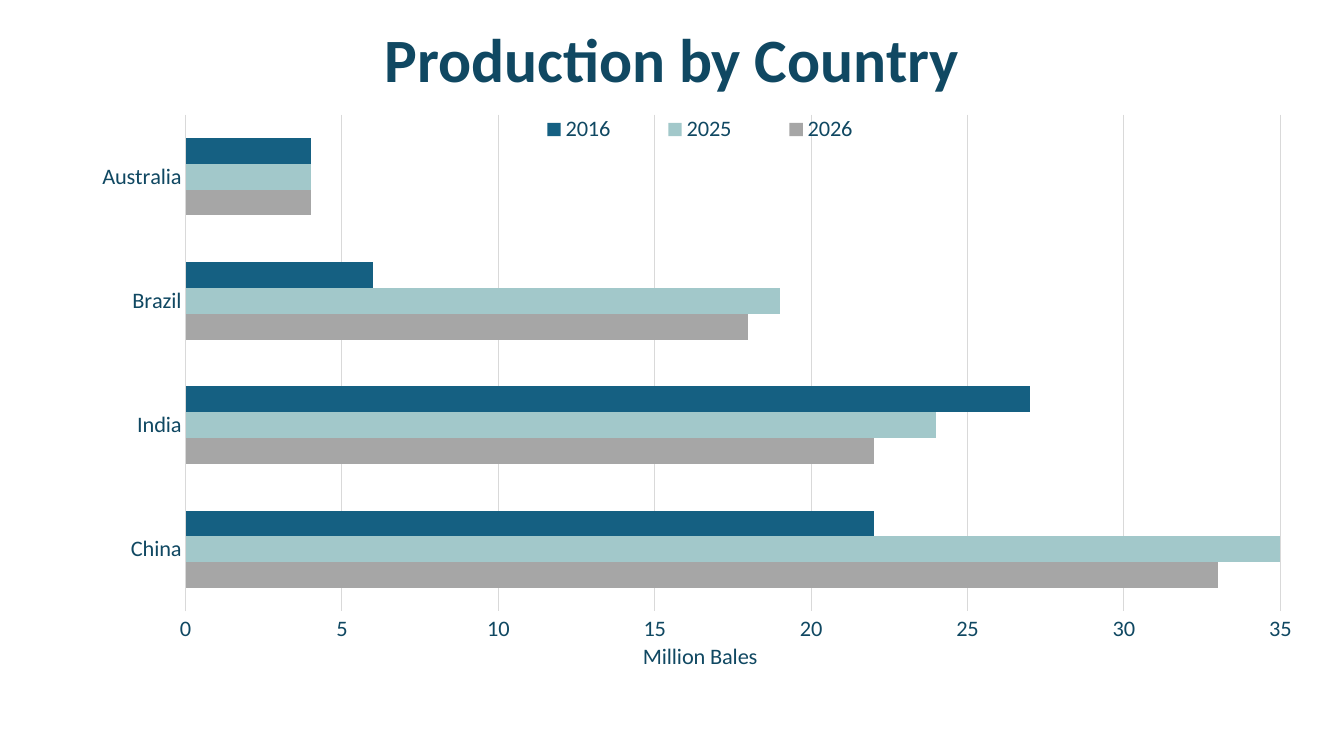
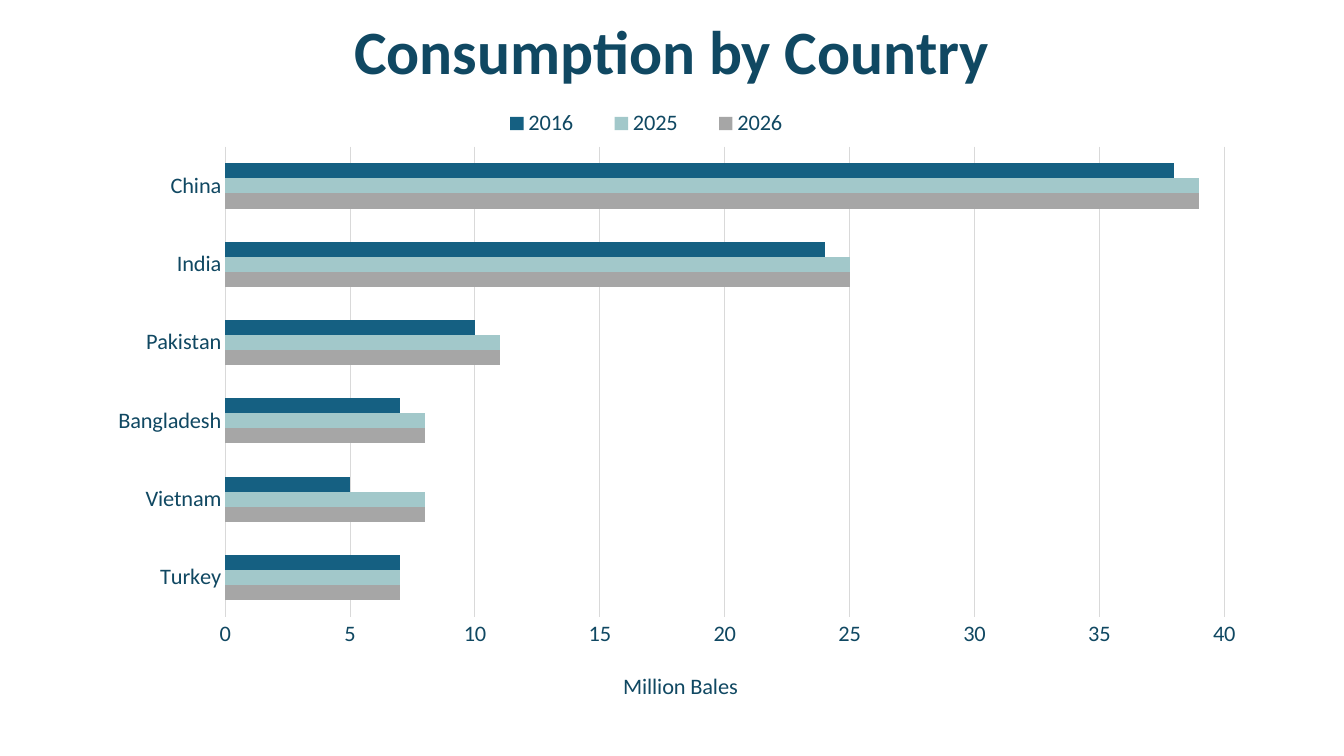
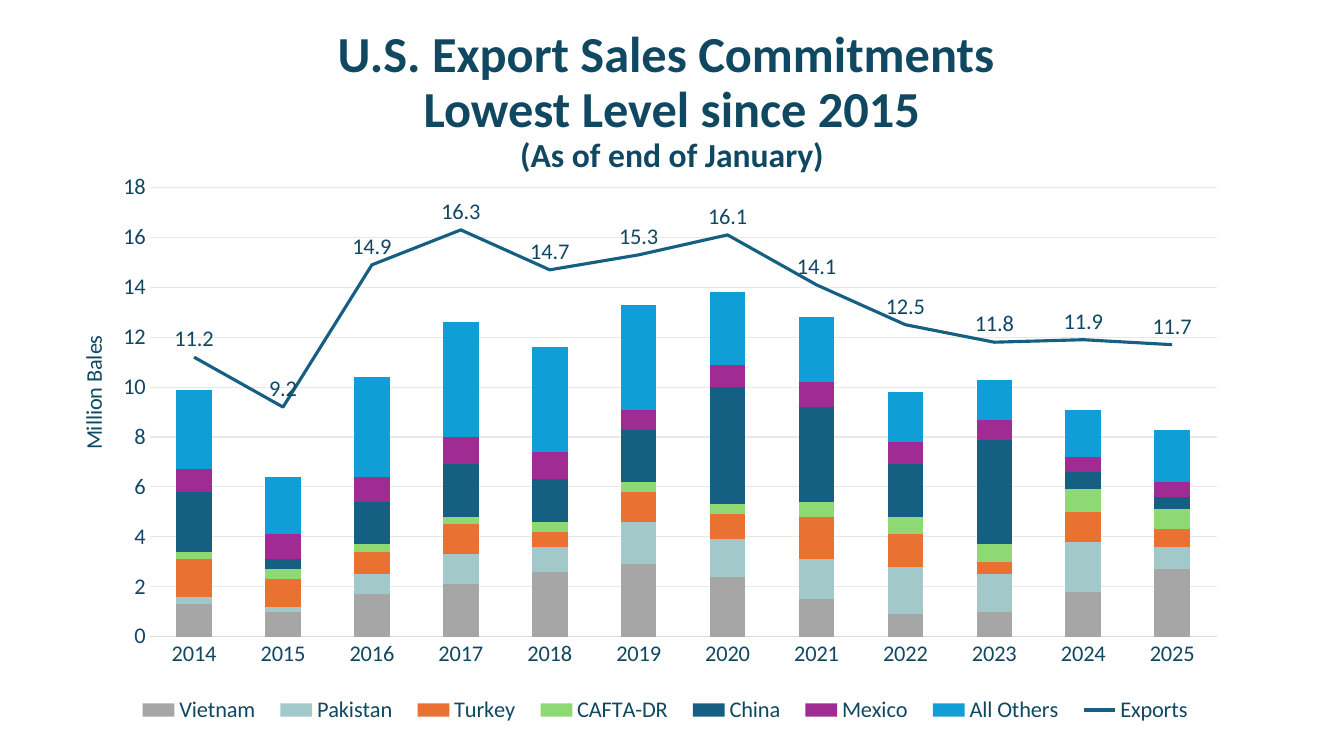
import pptx
import pptx.util
import pptx.oxml
import pptx.oxml.ns
import pptx.chart.data
import pptx.dml.color
import pptx.enum.chart
import pptx.enum.text


class Theme:
    font = "Calibri"
    ink, rule, pale = "104862", "D9D9D9", "E8E8E8"
    navy, mint, grey = "156082", "A2C8CA", "A6A6A6"
    rust, lime, plum, sky = "E97132", "8ED973", "A02B93", "0F9ED5"
    big, mid, small, body = 44, 36, 24, 16
    hair, bold = 0.75, 2.25


kinds = pptx.enum.chart.XL_CHART_TYPE
marks = pptx.enum.chart.XL_TICK_MARK
spots = pptx.enum.chart.XL_LABEL_POSITION
rgb = pptx.dml.color.RGBColor.from_string
cell = pptx.util.Pt(6)  # grid of 160 columns by 90 rows
space = pptx.oxml.ns.nsdecls("c")


def dress(font, size, bold=False):
    look = {"name": Theme.font, "size": pptx.util.Pt(size), "bold": bold}
    for key, val in look.items():
        setattr(font, key, val)
    font.color.rgb = rgb(Theme.ink)


def fit(part, slot, box, inner=""):
    """Place a chart part at a box given in percent of the chart."""
    for old in part.findall(pptx.oxml.ns.qn("c:layout")):
        part.remove(old)
    rows = inner + '<c:xMode val="edge"/><c:yMode val="edge"/>'
    rows += "".join(f'<c:{key} val="{val / 100:.3f}"/>' for key, val in zip("xywh", box))
    part.insert(slot, pptx.oxml.parse_xml(
        f"<c:layout {space}><c:manualLayout>{rows}</c:manualLayout></c:layout>"))


# Content: boxes in grid cells, chart parts in percent
years = [("2026", Theme.grey), ("2025", Theme.mint), ("2016", Theme.navy)]
pages = [
    {
        "head": [("Production by Country", Theme.big)],
        "top": (11, 2.6, 138, 9.6), "area": (4.4, 10.9, 151.2, 69.8),
        "kind": kinds.BAR_CLUSTERED, "gap": 182, "lap": 0,
        "max": 35, "step": 5, "fmt": "0", "grid": Theme.rule, "turn": 0,
        "plot": (11.7, 4, 86.2, 85.7), "key": (36.2, 3.3, 32, 6.5), "unit": (47.4, 94.2),
        "cats": ["China", "India", "Brazil", "Australia"],
        "rows": [(*year, vals) for year, vals in zip(years, [
            [33, 22, 18, 4], [35, 24, 19, 4], [22, 27, 6, 4]])],
    },
    {
        "head": [("Consumption by Country", Theme.big)],
        "top": (11, 1.7, 138, 9.6), "area": (9.5, 11.5, 139.6, 72.7),
        "kind": kinds.BAR_CLUSTERED, "gap": 219, "lap": 0,
        "max": 40, "step": 5, "fmt": "0", "grid": Theme.rule, "turn": 0,
        "plot": (12.4, 8.3, 85.2, 77.8), "key": (33.8, 1.2, 29, 6.5), "unit": (46, 94.4),
        "cats": ["Turkey", "Vietnam", "Bangladesh", "Pakistan", "India", "China"],
        "rows": [(*year, vals) for year, vals in zip(years, [
            [7, 8, 8, 11, 25, 39], [7, 8, 8, 11, 25, 39], [7, 5, 7, 10, 24, 38]])],
    },
    {
        "head": [("U.S. Export Sales Commitments ", Theme.mid),
                 ("Lowest Level since 2015", Theme.mid),
                 ("(As of end of January)", Theme.small)],
        "top": (0, 4.6, 160, 15), "area": (7.8, 19.6, 147.2, 68.2),
        "kind": kinds.COLUMN_STACKED, "gap": 150, "lap": 100,
        "max": 18, "step": 2, "fmt": "#,##0", "grid": Theme.pale, "turn": -5400000,
        "plot": (6.8, 4, 86.3, 78.4), "key": (4.8, 91.7, 87.4, 7), "unit": (0.7, 29.1),
        "cats": [str(year) for year in range(2014, 2026)],
        "rows": [
            ("Vietnam", Theme.grey, [1.3, 1, 1.7, 2.1, 2.6, 2.9, 2.4, 1.5, 0.9, 1, 1.8, 2.7]),
            ("Pakistan", Theme.mint, [0.3, 0.2, 0.8, 1.2, 1, 1.7, 1.5, 1.6, 1.9, 1.5, 2, 0.9]),
            ("Turkey", Theme.rust, [1.5, 1.1, 0.9, 1.2, 0.6, 1.2, 1, 1.7, 1.3, 0.5, 1.2, 0.7]),
            ("CAFTA-DR", Theme.lime, [0.3, 0.4, 0.3, 0.3, 0.4, 0.4, 0.4, 0.6, 0.7, 0.7, 0.9, 0.8]),
            ("China", Theme.navy, [2.4, 0.4, 1.7, 2.1, 1.7, 2.1, 4.7, 3.8, 2.1, 4.2, 0.7, 0.5]),
            ("Mexico", Theme.plum, [0.9, 1, 1, 1.1, 1.1, 0.8, 0.9, 1, 0.9, 0.8, 0.6, 0.6]),
            ("All Others", Theme.sky, [3.2, 2.3, 4, 4.6, 4.2, 4.2, 2.9, 2.6, 2, 1.6, 1.9, 2.1]),
        ],
        "line": ("Exports", Theme.navy, [11.2, 9.2, 14.9, 16.3, 14.7, 15.3,
                                         16.1, 14.1, 12.5, 11.8, 11.9, 11.7]),
    },
]

deck = pptx.Presentation()
deck.slide_width, deck.slide_height = 160 * cell, 90 * cell

for page in pages:
    slide = deck.slides.add_slide(deck.slide_layouts[6])

    # Title
    frame = slide.shapes.add_textbox(*[round(n * cell) for n in page["top"]]).text_frame
    frame.word_wrap = True
    frame.vertical_anchor = pptx.enum.text.MSO_ANCHOR.MIDDLE
    para = frame.paragraphs[0]
    para.alignment = pptx.enum.text.PP_ALIGN.CENTER
    para.line_spacing = 0.9
    for num, (text, size) in enumerate(page["head"]):
        if num:
            para.add_line_break()
        run = para.add_run()
        run.text = text
        dress(run.font, size, True)

    # Chart and bars
    line = page.get("line")
    rows = page["rows"] + ([line] if line else [])
    data = pptx.chart.data.CategoryChartData()
    data.categories = page["cats"]
    for name, _, vals in rows:
        data.add_series(name, vals)
    area = [round(n * cell) for n in page["area"]]
    chart = slide.shapes.add_chart(page["kind"], *area, data).chart
    chart.has_title = False
    dress(chart.font, Theme.body)
    bars = chart.plots[0]
    for key, val in {"gap_width": page["gap"], "overlap": page["lap"],
                     "vary_by_categories": False}.items():
        setattr(bars, key, val)
    for bar, (_, hue, _) in zip(bars.series, rows):
        bar.format.fill.solid()
        bar.format.fill.fore_color.rgb = rgb(hue)

    # Axes
    cats, vals = chart.category_axis, chart.value_axis
    for key, val in {"minimum_scale": 0, "maximum_scale": page["max"],
                     "major_unit": page["step"], "has_major_gridlines": True}.items():
        setattr(vals, key, val)
    for axis in (cats, vals):
        axis.major_tick_mark = axis.minor_tick_mark = marks.NONE
        dress(axis.tick_labels.font, Theme.body)
    vals.tick_labels.number_format = page["fmt"]
    vals.tick_labels.number_format_is_linked = False
    vals.format.line.fill.background()
    for edge, hue in ((cats.format.line, Theme.rule),
                      (vals.major_gridlines.format.line, page["grid"])):
        edge.color.rgb = rgb(hue)
        edge.width = pptx.util.Pt(Theme.hair)
    unit = vals.axis_title
    unit.text_frame.text = "Million Bales"
    unit.text_frame._txBody.bodyPr.set("rot", str(page["turn"]))
    dress(unit.text_frame.paragraphs[0].runs[0].font, Theme.body)

    # Legend and placing
    chart.has_legend = True
    chart.legend.position = pptx.enum.chart.XL_LEGEND_POSITION.BOTTOM
    chart.legend.include_in_layout = False
    dress(chart.legend.font, Theme.body)
    plot = chart._chartSpace.xpath(".//c:plotArea")[0]
    fit(plot, 0, page["plot"], '<c:layoutTarget val="inner"/>')
    fit(chart.legend._element, 1, page["key"])
    fit(unit._element, 1, page["unit"])

    # Line on a hidden second axis
    if line:
        last = bars.series[len(rows) - 1]._element
        for tag in ("c:invertIfNegative", "c:spPr"):
            for old in last.findall(pptx.oxml.ns.qn(tag)):
                last.remove(old)
        group = pptx.oxml.parse_xml(
            f'<c:lineChart {space}><c:grouping val="standard"/><c:varyColors val="0"/>'
            '<c:marker val="1"/><c:axId val="91"/><c:axId val="92"/></c:lineChart>')
        group.insert(2, last)
        plot.xpath("c:barChart")[0].addnext(group)
        tail = plot.xpath("c:valAx")[-1]
        for tag, own, other, side, span in (
                ("valAx", 92, 91, "r", f'<c:max val="{page["max"]}"/><c:min val="0"/>'),
                ("catAx", 91, 92, "b", "")):
            cross = "max" if tag == "valAx" else "autoZero"
            tail.addnext(pptx.oxml.parse_xml(
                f'<c:{tag} {space}><c:axId val="{own}"/><c:scaling>'
                f'<c:orientation val="minMax"/>{span}</c:scaling><c:delete val="1"/>'
                f'<c:axPos val="{side}"/><c:crossAx val="{other}"/>'
                f'<c:crosses val="{cross}"/></c:{tag}>'))
        curve = chart.plots[1].series[0]
        curve.smooth = False
        curve.marker.style = pptx.enum.chart.XL_MARKER_STYLE.NONE
        curve.format.line.color.rgb = rgb(line[1])
        curve.format.line.width = pptx.util.Pt(Theme.bold)
        for key, val in {"show_value": True, "position": spots.ABOVE,
                         "number_format": "#,##0.0",
                         "number_format_is_linked": False}.items():
            setattr(curve.data_labels, key, val)
        dress(curve.data_labels.font, Theme.body)

deck.save("out.pptx")
